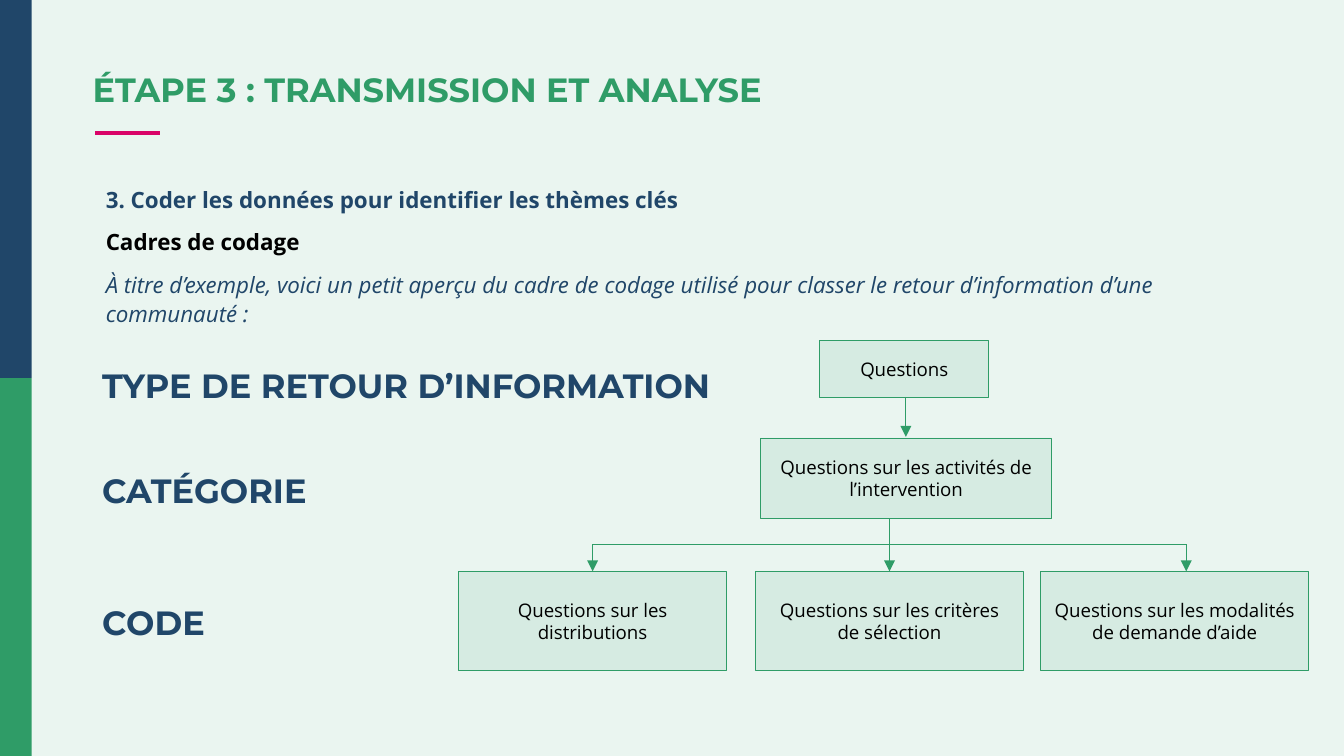
from lxml import etree
from pptx import Presentation
from pptx.dml.color import RGBColor
from pptx.enum.shapes import MSO_CONNECTOR as Conn, MSO_SHAPE as Kind
from pptx.enum.text import MSO_ANCHOR as Anchor, PP_ALIGN as Align
from pptx.oxml.ns import qn
from pptx.util import Cm, Pt

GREEN, NAVY, PINK, BLACK, PALE = "2F9C67", "204669", "D90368", "000000", "EAF5F0"
HEAD, BODY = "Montserrat", "Open Sans"
WIDE, HIGH = 25.4, 14.29

TITLE = "ÉTAPE 3 : TRANSMISSION ET ANALYSE"
INTRO = [  # text, colour, bold, italic
    ("3. Coder les données pour identifier les thèmes clés", NAVY, True, False),
    ("Cadres de codage", BLACK, True, False),
    ("À titre d’exemple, voici un petit aperçu du cadre de codage utilisé pour "
     "classer le retour d’information d’une communauté :", NAVY, False, True),
]
LEVELS = [("TYPE DE RETOUR D’INFORMATION", 6.78, 12.19),  # text, top, width
          ("CATÉGORIE", 8.76, 4.6), ("CODE", 11.25, 2.64)]
TOPIC = ("Questions", 15.49, 6.43, 3.2, 1.09)
GROUP = ("Questions sur les activités de l’intervention", 14.38, 8.28, 5.49, 1.52)
CODES = [("Questions sur les distributions", 8.66),  # text, left
         ("Questions sur les critères de sélection", 14.27),
         ("Questions sur les modalités de demande d’aide", 19.66)]
CODE_TOP, CODE_W, CODE_H = 10.8, 5.08, 1.88
STEM, MID, STEP, BUS = 17.12, 16.81, 5.61, 10.29


def rgb(code):
    return RGBColor.from_string(code)


def write(para, text, size, font, color, bold=False, italic=False):
    run = para.add_run()
    run.text = text
    face = run.font
    face.size, face.name, face.bold, face.italic = Pt(size), font, bold, italic
    face.color.rgb = rgb(color)


def rect(x, y, w, h, color):
    shape = slide.shapes.add_shape(Kind.RECTANGLE, Cm(x), Cm(y), Cm(w), Cm(h))
    shape.shadow.inherit = False
    shape.fill.solid()
    shape.fill.fore_color.rgb = rgb(color)
    shape.line.fill.background()
    return shape


def node(text, x, y, w, h):
    """Draw a see-through green box with centred text."""
    box = rect(x, y, w, h, GREEN)
    tint = box.fill._xPr.find(qn("a:solidFill"))[0]
    etree.SubElement(tint, qn("a:alpha"), val="10000")
    box.line.color.rgb = rgb(GREEN)
    box.line.width = Pt(0.5)
    frame = box.text_frame
    frame.word_wrap = True
    frame.vertical_anchor = Anchor.MIDDLE
    para = frame.paragraphs[0]
    para.alignment = Align.CENTER
    write(para, text, 10, BODY, BLACK)


def line(x1, y1, x2, y2, color=GREEN, width=0.5, arrow=False):
    link = slide.shapes.add_connector(Conn.STRAIGHT, Cm(x1), Cm(y1), Cm(x2), Cm(y2))
    link.line.color.rgb = rgb(color)
    link.line.width = Pt(width)
    if arrow:
        etree.SubElement(link.line._get_or_add_ln(), qn("a:tailEnd"), type="triangle")
    etree.SubElement(link._element.spPr, qn("a:effectLst"))


def textbox(x, y, w, h):
    return slide.shapes.add_textbox(Cm(x), Cm(y), Cm(w), Cm(h)).text_frame


deck = Presentation()
deck.slide_width, deck.slide_height = Cm(WIDE), Cm(HIGH)
slide = deck.slides.add_slide(deck.slide_layouts[5])
back = slide.background.fill
back.solid()
back.fore_color.rgb = rgb(PALE)

for i, color in enumerate((NAVY, GREEN)):
    rect(0, i * HIGH / 2, 0.6, HIGH / 2, color)
line(1.8, 2.51, 3.02, 2.51, PINK, 2.25)

title = slide.shapes.title
title.left, title.top, title.width, title.height = Cm(1.75), Cm(1.27), Cm(21.9), Cm(0.94)
frame = title.text_frame
frame.margin_left = 0
frame.vertical_anchor = Anchor.TOP
para = frame.paragraphs[0]
para.alignment = Align.LEFT
para.line_spacing = 0.9
write(para, TITLE, 18, HEAD, GREEN, True)

frame = textbox(1.75, 3.35, 21.9, 9.07)
frame.word_wrap = True
for i, (text, color, bold, italic) in enumerate(INTRO):
    para = frame.add_paragraph() if i else frame.paragraphs[0]
    para.line_spacing = Pt(15.4)
    para.space_before = Pt(7.5 if i else 0)
    write(para, text, 12, BODY, color, bold, italic)

line(STEM, 7.5, STEM, 8.26, arrow=True)
node(*TOPIC)
node(*GROUP)
for i, (text, x) in enumerate(CODES):
    node(text, x, CODE_TOP, CODE_W, CODE_H)
    drop = MID + (i - 1) * STEP
    line(drop, BUS, drop, CODE_TOP, arrow=True)
line(MID - STEP, BUS, MID + STEP, BUS)
line(MID, BUS, MID, 9.8, width=0.75)

for text, y, w in LEVELS:
    frame = textbox(1.68, y, w, 1.02)
    frame.word_wrap = False
    write(frame.paragraphs[0], text, 18, HEAD, NAVY, True)

deck.save("out.pptx")
